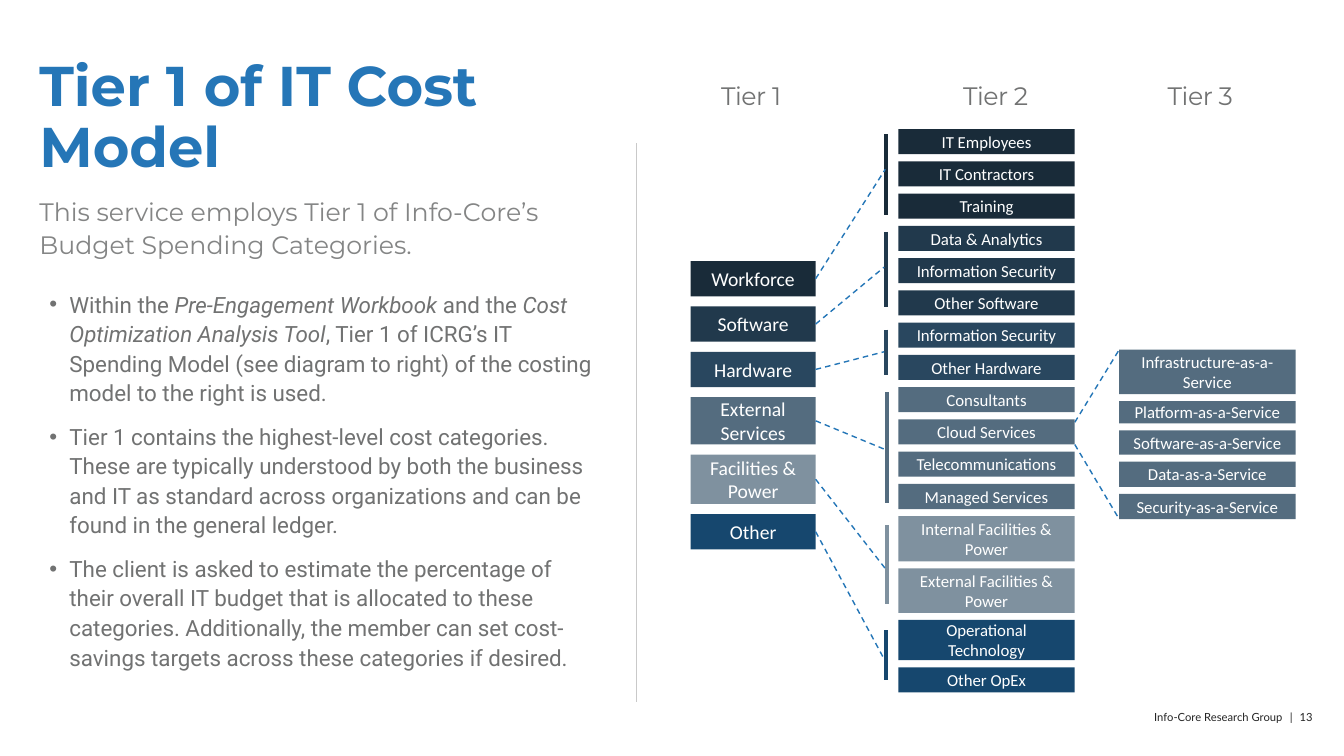
from lxml.etree import SubElement
from pptx import Presentation
from pptx.dml.color import RGBColor
from pptx.enum.dml import MSO_LINE
from pptx.enum.shapes import MSO_CONNECTOR, MSO_SHAPE
from pptx.enum.text import MSO_ANCHOR, PP_ALIGN
from pptx.oxml.ns import qn
from pptx.util import Inches, Pt

WHITE = RGBColor(0xFF, 0xFF, 0xFF)
BLACK = RGBColor(0x24, 0x24, 0x24)
BLUE = RGBColor(0x25, 0x76, 0xB7)
DASH_BLUE = RGBColor(0x24, 0x76, 0xB7)
GREY = RGBColor(0x71, 0x72, 0x72)
LIGHT_GREY = RGBColor(0x84, 0x85, 0x85)
RULE_GREY = RGBColor(0xC9, 0xC9, 0xC9)
INK = RGBColor(0x19, 0x2B, 0x39)
NAVY = RGBColor(0x21, 0x39, 0x4C)
STEEL = RGBColor(0x29, 0x47, 0x5F)
SLATE = RGBColor(0x54, 0x6C, 0x7F)
MIST = RGBColor(0x7F, 0x91, 0x9F)
OCEAN = RGBColor(0x16, 0x47, 0x6E)

BULLETS = [
    [("Within the ", False), ("Pre-Engagement Workbook ", True), ("and the ", False),
     ("Cost Optimization Analysis Tool", True),
     (", Tier 1 of ICRG’s IT Spending Model (see diagram to right) of the costing "
      "model to the right is used.", False)],
    [("Tier 1 contains the highest-level cost categories. These are typically understood "
      "by both the business and IT as standard across organizations and can be found in "
      "the general ledger.", False)],
    [("The client is asked to estimate the percentage of their overall IT budget that is "
      "allocated to these categories. Additionally, the member can set cost-savings "
      "targets across these categories if desired.", False)],
]

# name, colour, height, bracket (x, top, bottom), dash end (x, y), Tier 2 names and heights
CATEGORIES = [
    ("Workforce", INK, 0.35, (8.79, 1.33, 2.13), (8.78, 1.68),
     [("IT Employees", 0.25), ("IT Contractors", 0.25), ("Training", 0.25)]),
    ("Software", NAVY, 0.35, (8.79, 2.3, 3.05), (8.77, 2.65),
     [("Data & Analytics", 0.25), ("Information Security", 0.25), ("Other Software", 0.25)]),
    ("Hardware", STEEL, 0.35, (8.79, 3.27, 3.72), (8.77, 3.49),
     [("Information Security", 0.25), ("Other Hardware", 0.25)]),
    ("External Services", SLATE, 0.47, (8.8, 3.89, 4.99), (8.78, 4.46),
     [("Consultants", 0.25), ("Cloud Services", 0.25), ("Telecommunications", 0.25),
      ("Managed Services", 0.25)]),
    ("Facilities & Power", MIST, 0.49, (8.8, 5.21, 5.99), (8.78, 5.64),
     [("Internal Facilities & Power", 0.45), ("External Facilities & Power", 0.44)]),
    ("Other", OCEAN, 0.35, (8.79, 6.25, 6.75), (8.77, 6.54),
     [("Operational Technology", 0.4), ("Other OpEx", 0.25)]),
]
CLOUD_SERVICES = [
    ("Infrastructure-as-a-Service", 0.44), ("Platform-as-a-Service", 0.22),
    ("Software-as-a-Service", 0.24), ("Data-as-a-Service", 0.25),
    ("Security-as-a-Service", 0.25),
]
HEADINGS = [("Tier 1", 6.91, 1.08), ("Tier 2", 9.22, 1.31), ("Tier 3", 11.25, 1.31)]


class CostModelSlide:
    """Draws styled text, boxes and lines on one slide."""

    def __init__(self, page):
        self.page = page

    def span(self, para, text, spacing=0, **style):
        span = para.add_run()
        span.text = text
        font = span.font
        font.color.rgb = style.pop("color")
        for name, value in style.items():
            setattr(font, name, value)
        if spacing:
            span._r.get_or_add_rPr().set("spc", str(spacing))

    def frame(self, left, top, width, height, inset=0):
        box = self.page.shapes.add_textbox(
            Inches(left), Inches(top), Inches(width), Inches(height))
        frame = box.text_frame
        frame.word_wrap = True
        for side in ("left", "top", "right", "bottom"):
            setattr(frame, f"margin_{side}", Inches(inset))
        return frame

    def text(self, place, text, inset=0, spacing=0, layout=None, **style):
        para = self.frame(*place, inset=inset).paragraphs[0]
        for name, value in (layout or {}).items():
            setattr(para, name, value)
        self.span(para, text, spacing, **style)

    def bullets(self, place, items, **style):
        frame = self.frame(*place, inset=0.1)
        frame.margin_top = frame.margin_bottom = Inches(0.05)
        for index, item in enumerate(items):
            para = frame.add_paragraph() if index else frame.paragraphs[0]
            para.line_spacing = 1.1
            para.space_before = Pt(10 if index else 0)
            properties = para._p.get_or_add_pPr()
            properties.set("marL", str(Inches(0.2)))
            properties.set("indent", str(Inches(-0.2)))
            SubElement(properties, qn("a:buFont"), typeface="Arial")
            SubElement(properties, qn("a:buChar"), char="•")
            for text, italic in item:
                self.span(para, text, italic=italic, **style)

    def box(self, left, top, width, height, text, fill, size):
        box = self.page.shapes.add_shape(
            MSO_SHAPE.RECTANGLE, Inches(left), Inches(top), Inches(width), Inches(height))
        box.shadow.inherit = False
        box.fill.solid()
        box.fill.fore_color.rgb = fill
        box.line.fill.background()
        frame = box.text_frame
        frame.word_wrap = True
        frame.vertical_anchor = MSO_ANCHOR.MIDDLE
        para = frame.paragraphs[0]
        para.alignment = PP_ALIGN.CENTER
        self.span(para, text, name="Calibri", size=Pt(size), color=WHITE)
        return box

    def stack(self, left, top, width, gap, items, size):
        boxes = []
        for text, height, fill in items:
            boxes.append(self.box(left, top, width, height, text, fill, size))
            top += height + gap
        return boxes

    def line(self, start, end, color, weight, dash=None, source=None):
        line = self.page.shapes.add_connector(
            MSO_CONNECTOR.STRAIGHT, *(Inches(value) for value in (*start, *end)))
        if source is not None:
            line.begin_connect(source, 3)
        line.line.color.rgb = color
        line.line.width = Pt(weight)
        line.line.dash_style = dash
        SubElement(line._element.spPr, qn("a:effectLst"))

    def footer(self, place):
        para = self.frame(*place).paragraphs[0]
        para.alignment = PP_ALIGN.RIGHT
        for text, spacing in (("Info-Core Research Group", 0), (" ", 300), ("|", 0),
                              (" ", 300), ("13", 0)):
            self.span(para, text, spacing, name="Lato", size=Pt(8), color=BLACK)


def main():
    deck = Presentation()
    deck.slide_width, deck.slide_height = Inches(13.33), Inches(7.5)
    slide = CostModelSlide(deck.slides.add_slide(deck.slide_layouts[6]))

    slide.footer((9.62, 7.05, 3.4, 0.13))
    slide.text((0.39, 0.58, 4.69, 1.24), "Tier 1 of IT Cost Model", layout={"line_spacing": 0.9},
               name="Montserrat", size=Pt(40), bold=True, color=BLUE)
    slide.line((6.31, 1.42), (6.31, 6.96), RULE_GREY, 0.25)
    slide.bullets((0.39, 2.81, 5.62, 4.11), BULLETS, name="Roboto", size=Pt(16), color=GREY)
    slide.text((0.39, 1.91, 5.79, 0.72),
               "This service employs Tier 1 of Info-Core’s Budget Spending Categories.",
               layout={"line_spacing": Pt(24)},
               name="Montserrat", size=Pt(18), color=LIGHT_GREY)
    for heading, left, width in HEADINGS:
        slide.text((left, 0.7, width, 0.5), heading, inset=0.1, spacing=-30,
                   layout={"alignment": PP_ALIGN.CENTER},
                   name="Montserrat", size=Pt(18), color=GREY)

    for end, start in ((3.47, 4.19), (5.15, 4.41)):
        slide.line((10.66, start), (11.1, end), DASH_BLUE, 1, MSO_LINE.DASH)
    tier_one = [(name, height, color) for name, color, height, *_ in CATEGORIES]
    tier_two = [(name, height, color) for _, color, *_, children in CATEGORIES
                for name, height in children]
    tier_three = [(name, height, SLATE) for name, height in CLOUD_SERVICES]
    sources = slide.stack(6.85, 2.59, 1.24, 0.1, tier_one, 14)
    slide.stack(8.91, 1.28, 1.75, 0.07, tier_two, 12)
    slide.stack(11.1, 3.47, 1.75, 0.07, tier_three, 12)

    for source, (_, color, _, (left, top, bottom), end, _) in zip(sources, CATEGORIES):
        slide.line((left, top), (left, bottom), color, 3)
        slide.line((8.09, end[1]), end, DASH_BLUE, 1, MSO_LINE.DASH, source)

    deck.save("out.pptx")


if __name__ == "__main__":
    main()
